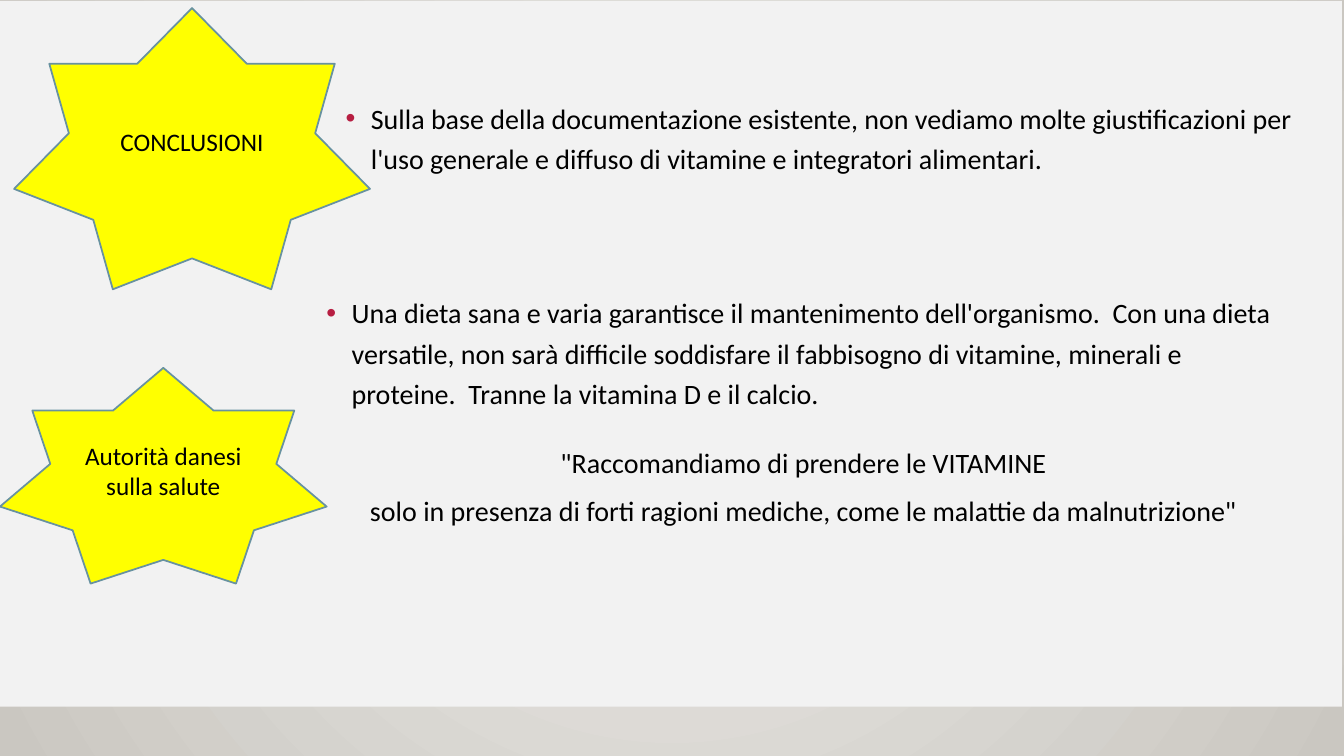
from dataclasses import dataclass

from lxml import etree
from pptx import Presentation
from pptx.dml.color import RGBColor
from pptx.enum.shapes import MSO_SHAPE as Shape
from pptx.enum.text import MSO_ANCHOR as Anchor, PP_ALIGN as Align
from pptx.oxml.ns import qn
from pptx.util import Inches, Pt


@dataclass(frozen=True)
class Theme:
    font: str = "Calibri"
    body_size: int = 20
    star_size: int = 18
    text: str = "000000"
    panel: str = "F2F2F2"
    star: str = "FFFF00"
    star_line: str = "6892A0"
    bullet: str = "B71E42"
    background: tuple = ("ECEAE7", "CAC7C1")  # centre, edge


theme = Theme()

# Content: text, then (left, top, width, height) in inches
panel_box = (-0.02, 0.01, 13.33, 7)
stars = [
    ("CONCLUSIONI", (0.14, 0.08, 3.53, 2.79)),
    ("Autorità danesi sulla salute", (0, 3.65, 3.24, 2.14)),
]
bullets = [
    ("Sulla base della documentazione esistente, non vediamo molte giustificazioni "
     "per l'uso generale e diffuso di vitamine e integratori alimentari.",
     (3.33, 0.89, 9.66, 1.05)),
    ("Una dieta sana e varia garantisce il mantenimento dell'organismo.  Con una "
     "dieta versatile, non sarà difficile soddisfare il fabbisogno di vitamine, "
     "minerali e proteine.  Tranne la vitamina D e il calcio.",
     (3.14, 2.82, 9.66, 1.4)),
]
quote = [
    "\"Raccomandiamo di prendere le VITAMINE",
    "solo in presenza di forti ragioni mediche, come le malattie da malnutrizione\"",
]
quote_box = (2.81, 4.37, 10.32, 1)


def color(value):
    return RGBColor.from_string(value)


def style(paragraph, size):
    paragraph.font.name = theme.font
    paragraph.font.size = Pt(size)
    paragraph.font.color.rgb = color(theme.text)


def add_filled_shape(slide, kind, box, fill):
    shape = slide.shapes.add_shape(kind, *map(Inches, box))
    shape.shadow.inherit = False
    shape.fill.solid()
    shape.fill.fore_color.rgb = color(fill)
    return shape


def add_text(slide, lines, box):
    frame = slide.shapes.add_textbox(*map(Inches, box)).text_frame
    frame.word_wrap = True
    frame.text = "\n".join(lines)
    return frame.paragraphs


def add_bullet(paragraph):
    properties = paragraph._p.get_or_add_pPr()
    properties.set("marL", str(Inches(0.25)))
    properties.set("indent", str(Inches(-0.25)))
    bullet_color = etree.SubElement(properties, qn("a:buClr"))
    etree.SubElement(bullet_color, qn("a:srgbClr"), val=theme.bullet)
    etree.SubElement(properties, qn("a:buFont"), typeface="Arial")
    etree.SubElement(properties, qn("a:buChar"), char="•")


def set_radial_background(slide):
    fill = slide.background.fill
    fill.gradient()
    for stop, value in zip(fill.gradient_stops, theme.background):
        stop.color.rgb = color(value)
    gradient = slide._element.find(".//" + qn("a:gradFill"))
    direction = gradient.find(qn("a:lin"))
    radial = etree.Element(qn("a:path"), path="circle")
    etree.SubElement(radial, qn("a:fillToRect"),
                     dict.fromkeys("ltrb", "50000"))
    gradient.replace(direction, radial)


def main():
    presentation = Presentation()
    presentation.slide_width = Inches(13.33)
    presentation.slide_height = Inches(7.5)
    slide = presentation.slides.add_slide(presentation.slide_layouts[6])

    # Background and light panel
    set_radial_background(slide)
    panel = add_filled_shape(slide, Shape.RECTANGLE, panel_box, theme.panel)
    panel.line.fill.background()

    # Closing quotation
    for number, paragraph in enumerate(add_text(slide, quote, quote_box)):
        paragraph.alignment = Align.CENTER
        paragraph.space_before = Pt(10 if number else 0)
        style(paragraph, theme.body_size)

    # Labelled stars
    for label, box in stars:
        star = add_filled_shape(slide, Shape.STAR_7_POINT, box, theme.star)
        star.line.color.rgb = color(theme.star_line)
        star.line.width = Pt(1.25)
        frame = star.text_frame
        frame.text = label
        frame.vertical_anchor = Anchor.MIDDLE
        frame.paragraphs[0].alignment = Align.CENTER
        style(frame.paragraphs[0], theme.star_size)

    # Bulleted statements
    for text, box in bullets:
        paragraph = add_text(slide, [text], box)[0]
        add_bullet(paragraph)
        paragraph.line_spacing = 1.2
        style(paragraph, theme.body_size)

    presentation.save("out.pptx")


if __name__ == "__main__":
    main()
